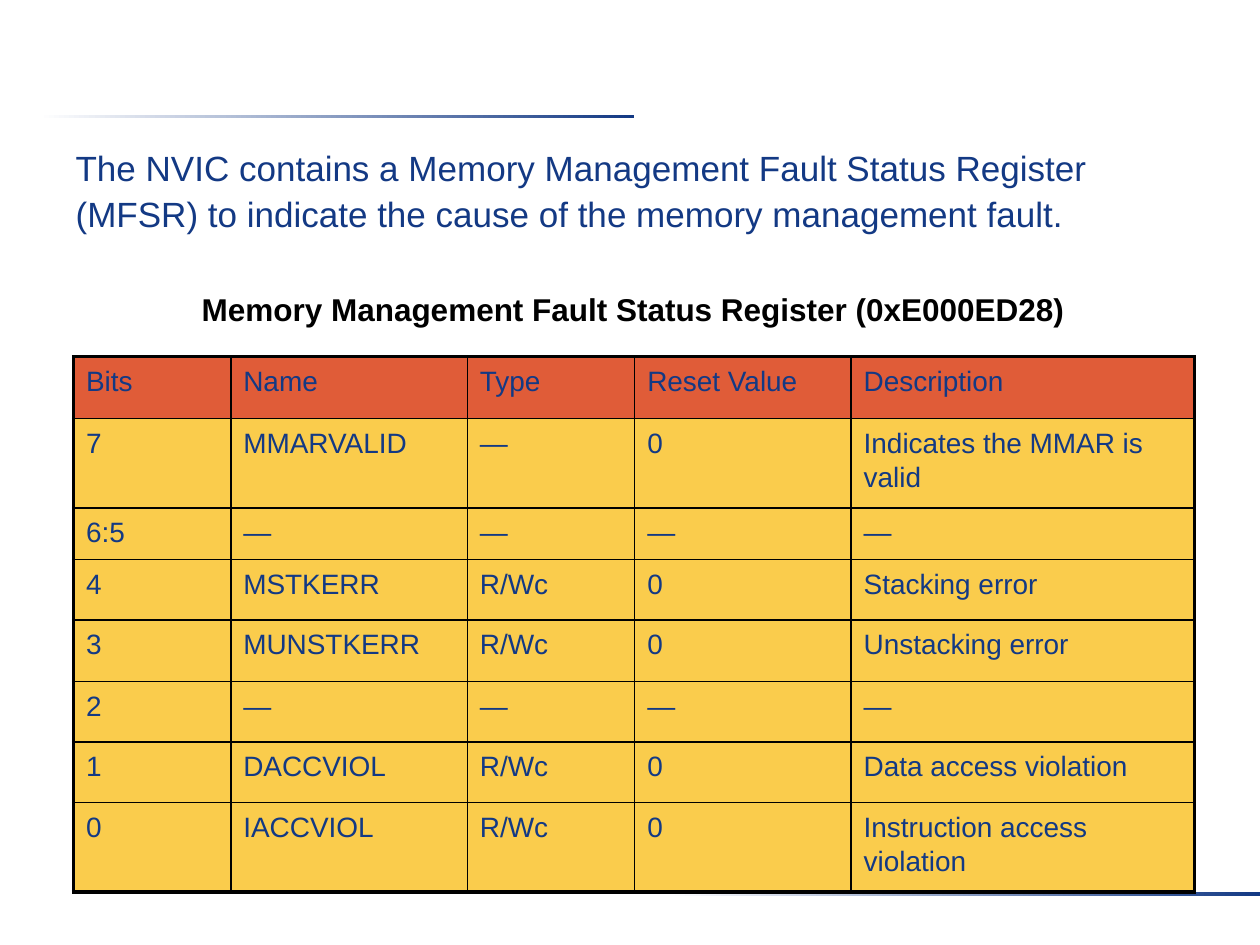
from lxml.etree import SubElement
from pptx import Presentation
from pptx.dml.color import RGBColor
from pptx.enum.shapes import MSO_SHAPE
from pptx.enum.text import MSO_ANCHOR, MSO_AUTO_SIZE, PP_ALIGN
from pptx.oxml.ns import qn
from pptx.util import Inches, Pt

W, H = Inches(10), Inches(7.5)
NAVY, BLACK, WHITE = "133984", "000000", "FFFFFF"
HEADER_FILL, BODY_FILL = "E05C38", "FACC4C"
THIN, THICK = 1, 2.25

COLUMN_WEIGHTS = [1.25, 1.88, 1.33, 1.72, 2.73]
ROW_WEIGHTS = [0.49, 0.71, 0.41, 0.48, 0.49, 0.48, 0.48, 0.71]
REGISTER_ROWS = [
    ["Bits", "Name", "Type", "Reset Value", "Description"],
    ["7", "MMARVALID", "—", "0", "Indicates the MMAR is valid"],
    ["6:5", "—", "—", "—", "—"],
    ["4", "MSTKERR", "R/Wc", "0", "Stacking error"],
    ["3", "MUNSTKERR", "R/Wc", "0", "Unstacking error"],
    ["2", "—", "—", "—", "—"],
    ["1", "DACCVIOL", "R/Wc", "0", "Data access violation"],
    ["0", "IACCVIOL", "R/Wc", "0", "Instruction access violation"],
]


def color(value):
    return RGBColor.from_string(value)


def box(left, top, width, height):
    """Turn percentages of the slide's size into lengths."""
    return [int(size * share / 100)
            for size, share in zip((W, H, W, H), (left, top, width, height))]


def write(tf, text, size, fill=NAVY, bold=False, spacing=None, align=PP_ALIGN.LEFT):
    p = tf.paragraphs[0]
    p.alignment = align
    p.space_before = Pt(0)
    p.line_spacing = spacing
    r = p.add_run()
    r.text = text
    r.font.name = "Arial"
    r.font.size = Pt(size)
    r.font.bold = bold
    r.font.color.rgb = color(fill)
    return p


def add_rule(s, area):
    sp = s.shapes.add_shape(MSO_SHAPE.RECTANGLE, *area)
    sp.shadow.inherit = False
    sp.line.fill.background()
    sp.fill.gradient()
    sp.fill.gradient_angle = 0
    for stop, position, value in zip(sp.fill.gradient_stops, (0, 1), (WHITE, NAVY)):
        stop.position = position
        stop.color.rgb = color(value)


def add_intro(s, area, text):
    sp = s.placeholders[1]
    sp.left, sp.top, sp.width, sp.height = area
    tf = sp.text_frame
    tf.auto_size = MSO_AUTO_SIZE.NONE
    tf.vertical_anchor = MSO_ANCHOR.TOP
    pPr = write(tf, text, 20, spacing=1.1)._p.get_or_add_pPr()
    pPr.set("marL", "0")
    pPr.set("indent", "0")
    SubElement(pPr, qn("a:buNone"))


def add_caption(s, area, text):
    tf = s.shapes.add_textbox(*area).text_frame
    tf.word_wrap = False
    tf.auto_size = MSO_AUTO_SIZE.SHAPE_TO_FIT_TEXT
    write(tf, text, 18, BLACK, bold=True, align=PP_ALIGN.CENTER)


def set_borders(cell, **widths):
    tcPr = cell._tc.get_or_add_tcPr()
    for side, width in widths.items():
        ln = SubElement(tcPr, qn(f"a:ln{side}"), w=str(Pt(width)))
        fill = SubElement(ln, qn("a:solidFill"))
        SubElement(fill, qn("a:srgbClr"), val=BLACK)


def add_register_table(s, area, rows):
    last_row, last_col = len(rows) - 1, len(rows[0]) - 1
    table = s.shapes.add_table(len(rows), len(rows[0]), *area).table
    table.first_row = table.horz_banding = False
    for column, weight in zip(table.columns, COLUMN_WEIGHTS):
        column.width = int(area[2] * weight / sum(COLUMN_WEIGHTS))
    for row, weight in zip(table.rows, ROW_WEIGHTS):
        row.height = int(area[3] * weight / sum(ROW_WEIGHTS))
    for i, values in enumerate(rows):
        for j, value in enumerate(values):
            cell = table.cell(i, j)
            write(cell.text_frame, value, 16, spacing=1.1)
            # Thick outer frame, thin inner lines
            set_borders(cell,
                        L=THICK if j == 0 else THIN,
                        R=THICK if j == last_col else THIN,
                        T=THICK if i == 0 else THIN,
                        B=THICK if i == last_row else THIN)
            cell.fill.solid()
            cell.fill.fore_color.rgb = color(BODY_FILL if i else HEADER_FILL)


def main():
    prs = Presentation()
    prs.slide_width, prs.slide_height = W, H
    s = prs.slides.add_slide(prs.slide_layouts[1])
    title = s.shapes.title._element
    title.getparent().remove(title)

    # Decorative rules
    add_rule(s, box(3.1, 12.13, 47.2, 0.4))
    add_rule(s, box(52.8, 94.4, 47.2, 0.4))

    # Text
    add_intro(s, box(5, 14.4, 90.7, 14.67),
              "The NVIC contains a Memory Management Fault Status Register (MFSR) "
              "to indicate the cause of the memory management fault.")
    add_caption(s, box(15, 30, 70.5, 5.33),
                "Memory Management Fault Status Register (0xE000ED28)")

    # Register fields
    add_register_table(s, box(5.83, 37.75, 89, 56.67), REGISTER_ROWS)
    prs.save("out.pptx")


if __name__ == "__main__":
    main()
